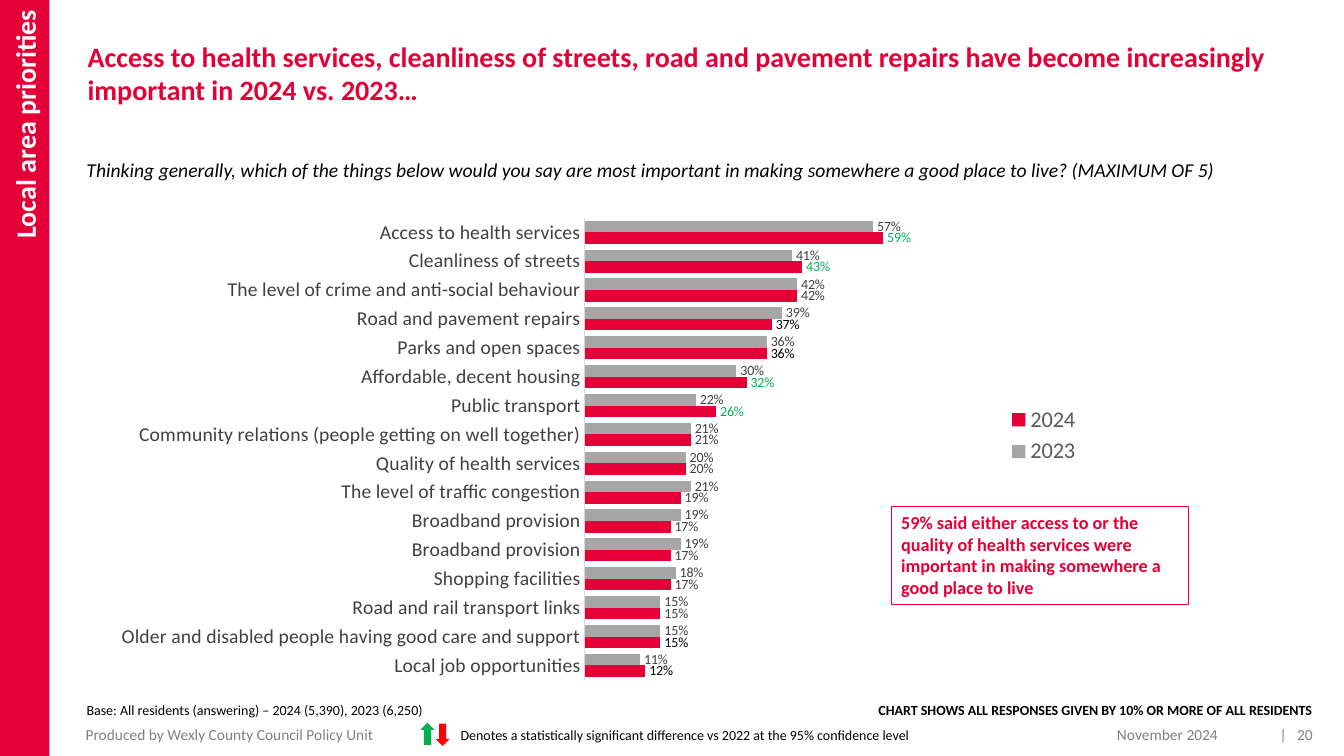
from dataclasses import dataclass

from lxml import etree
from pptx import Presentation
from pptx.chart.data import CategoryChartData
from pptx.dml.color import RGBColor
from pptx.enum.chart import XL_CHART_TYPE, XL_LABEL_POSITION, XL_LEGEND_POSITION, XL_TICK_MARK
from pptx.enum.shapes import MSO_SHAPE
from pptx.enum.text import MSO_ANCHOR, PP_ALIGN
from pptx.oxml.ns import qn
from pptx.util import Inches, Pt

LEFT, RIGHT = PP_ALIGN.LEFT, PP_ALIGN.RIGHT
TOP, MIDDLE = MSO_ANCHOR.TOP, MSO_ANCHOR.MIDDLE
RECTANGLE, UP, DOWN = MSO_SHAPE.RECTANGLE, MSO_SHAPE.UP_ARROW, MSO_SHAPE.DOWN_ARROW
BAR_CLUSTERED = XL_CHART_TYPE.BAR_CLUSTERED
OUTSIDE_END = XL_LABEL_POSITION.OUTSIDE_END
LEGEND_RIGHT = XL_LEGEND_POSITION.RIGHT
NO_TICK = XL_TICK_MARK.NONE


@dataclass(frozen=True)
class Theme:
    font: str = "Calibri"
    red: str = "E40037"
    white: str = "FFFFFF"
    black: str = "000000"
    dark: str = "404040"
    legend: str = "595959"
    footer: str = "808080"
    bar: str = "A6A6A6"
    axis: str = "D9D9D9"
    rise: str = "00B050"
    fall: str = "FF0000"
    heading: int = 20
    legend_size: int = 16
    body: int = 14
    callout: int = 13
    footer_size: int = 11
    small: int = 10


THEME = Theme()
INSETS = (0.1, 0.05, 0.1, 0.05)

SECTION = "Local area priorities"
CALLOUT = ("59% said either access to or the quality of health services were "
           "important in making somewhere a good place to live")

TEXTS = [
    dict(words="Access to health services, cleanliness of streets, road and pavement repairs "
               "have become increasingly important in 2024 vs. 2023…",
         place=(0.77, 0.34, 12.25, 1.18), size=THEME.heading, color=THEME.red, bold=True),
    dict(words="Thinking generally, which of the things below would you say are most important "
               "in making somewhere a good place to live? (MAXIMUM OF 5)",
         place=(0.76, 1.52, 12.07, 0.34), size=THEME.body, italic=True),
    dict(words="Base: All residents (answering) – 2024 (5,390), 2023 (6,250)",
         place=(0.76, 6.91, 3.75, 0.27)),
    dict(words="CHART SHOWS ALL RESPONSES GIVEN BY 10% OR MORE OF ALL RESIDENTS",
         place=(5.61, 6.91, 7.5, 0.27), bold=True, align=RIGHT),
    dict(words="Denotes a statistically significant difference vs 2022 at the 95% confidence level",
         place=(4.47, 7.16, 6.2, 0.27)),
    dict(words="Produced by Wexly County Council Policy Unit", place=(0.76, 7.21, 6.54, 0.15),
         size=THEME.footer_size, color=THEME.footer, anchor=MIDDLE, insets=(0.09, 0.05, 0.1, 0.05)),
    dict(words="November 2024", place=(9.68, 7.21, 2.4, 0.15), size=THEME.footer_size,
         color=THEME.footer, align=RIGHT, anchor=MIDDLE, insets=(0.1, 0.05, 0, 0.05)),
    dict(words="|   20", place=(12.17, 7.21, 0.85, 0.15), size=THEME.footer_size,
         color=THEME.footer, align=RIGHT, anchor=MIDDLE, insets=(0.1, 0.05, 0, 0.05)),
]

PRIORITIES = [
    ("Access to health services", 0.57, 0.59, THEME.rise),
    ("Cleanliness of streets", 0.41, 0.43, THEME.rise),
    ("The level of crime and anti-social behaviour", 0.42, 0.42, THEME.dark),
    ("Road and pavement repairs", 0.39, 0.37, THEME.black),
    ("Parks and open spaces", 0.36, 0.36, THEME.black),
    ("Affordable, decent housing", 0.30, 0.32, THEME.rise),
    ("Public transport", 0.22, 0.26, THEME.rise),
    ("Community relations (people getting on well together)", 0.21, 0.21, THEME.dark),
    ("Quality of health services", 0.20, 0.20, THEME.dark),
    ("The level of traffic congestion", 0.21, 0.19, THEME.dark),
    ("Broadband provision", 0.19, 0.17, THEME.dark),
    ("Broadband provision", 0.19, 0.17, THEME.dark),
    ("Shopping facilities", 0.18, 0.17, THEME.dark),
    ("Road and rail transport links", 0.15, 0.15, THEME.dark),
    ("Older and disabled people having good care and support", 0.15, 0.15, THEME.black),
    ("Local job opportunities", 0.11, 0.12, THEME.black),
]
CHART_PLACE = (1.05, 1.9, 9.77, 4.85)
PLOT_AREA = {"x": 0.486, "y": 0.054, "w": 0.514, "h": 0.946}
ARROWS = [(UP, (4.17, 7.17, 0.14, 0.22), THEME.rise),
          (DOWN, (4.32, 7.18, 0.14, 0.22), THEME.fall)]


def rgb(color):
    return RGBColor.from_string(color)


def inches(values):
    return [Inches(value) for value in values]


def style_font(font, size, color, bold=False, italic=False):
    font.name, font.size, font.bold, font.italic = THEME.font, Pt(size), bold, italic
    font.color.rgb = rgb(color)


def write(box, words, size=THEME.small, color=THEME.black, bold=False, italic=False,
          align=LEFT, anchor=TOP, insets=INSETS):
    frame = box.text_frame
    frame.word_wrap = True
    frame.vertical_anchor = anchor
    frame.margin_left, frame.margin_top, frame.margin_right, frame.margin_bottom = inches(insets)
    para = frame.paragraphs[0]
    para.alignment = align
    span = para.add_run()
    span.text = words
    style_font(span.font, size, color, bold, italic)


def add_block(page, kind, place, fill=None, line=None):
    block = page.shapes.add_shape(kind, *inches(place))
    block.shadow.inherit = False
    if fill:
        block.fill.solid()
        block.fill.fore_color.rgb = rgb(fill)
    else:
        block.fill.background()
    if line:
        block.line.color.rgb = rgb(line)
        block.line.width = Pt(0.75)
    else:
        block.line.fill.background()
    return block


def fix_plot_area(chart):
    plot_area = chart.element.find(".//" + qn("c:plotArea"))
    for old in plot_area.findall(qn("c:layout")):
        plot_area.remove(old)
    layout = etree.Element(qn("c:layout"))
    manual = etree.SubElement(layout, qn("c:manualLayout"))
    settings = {"layoutTarget": "inner", "xMode": "edge", "yMode": "edge", **PLOT_AREA}
    for name, value in settings.items():
        etree.SubElement(manual, qn("c:" + name)).set("val", str(value))
    plot_area.insert(0, layout)


def add_priorities_chart(page):
    names, before, after, label_colors = zip(*PRIORITIES)
    data = CategoryChartData(number_format="0%")
    data.categories = names
    data.add_series("2023", before)
    data.add_series("2024", after)
    chart = page.shapes.add_chart(BAR_CLUSTERED, *inches(CHART_PLACE), data).chart
    chart.has_title = False
    style_font(chart.font, THEME.small, THEME.black)
    fix_plot_area(chart)

    chart.has_legend = True
    chart.legend.position = LEGEND_RIGHT
    chart.legend.include_in_layout = False
    style_font(chart.legend.font, THEME.legend_size, THEME.legend)

    rows, scale = chart.category_axis, chart.value_axis
    rows.reverse_order = True
    rows.major_tick_mark = rows.minor_tick_mark = NO_TICK
    rows.format.line.color.rgb = rgb(THEME.axis)
    rows.format.line.width = Pt(0.75)
    style_font(rows.tick_labels.font, THEME.body, THEME.dark)
    scale.minimum_scale, scale.maximum_scale = 0, 1
    scale.has_major_gridlines = False
    scale.visible = False

    plot = chart.plots[0]
    plot.gap_width, plot.overlap, plot.vary_by_categories = 50, 0, False
    for series, color in zip(plot.series, (THEME.bar, THEME.red)):
        series.format.fill.solid()
        series.format.fill.fore_color.rgb = rgb(color)
        labels = series.data_labels
        labels.show_value = True
        labels.number_format, labels.number_format_is_linked = "0%", False
        labels.position = OUTSIDE_END
        style_font(labels.font, THEME.small, THEME.dark)
    for index, color in enumerate(label_colors):
        if color != THEME.dark:
            label = plot.series[1].points[index].data_label
            style_font(label.font, THEME.small, color)
            label.position = OUTSIDE_END


def main():
    deck = Presentation()
    deck.slide_width, deck.slide_height = Inches(13.33), Inches(7.5)
    page = deck.slides.add_slide(deck.slide_layouts[6])
    add_priorities_chart(page)

    band = add_block(page, RECTANGLE, (0, 0, 0.49, 7.5), fill=THEME.red)
    write(band, SECTION, THEME.heading, THEME.white, bold=True, align=RIGHT, anchor=MIDDLE,
          insets=(0.1, 0.1, 0.1, 0.05))
    band.element.find(".//" + qn("a:bodyPr")).set("vert", "vert270")

    for text in TEXTS:
        options = dict(text)
        write(page.shapes.add_textbox(*inches(options.pop("place"))), **options)

    callout = add_block(page, RECTANGLE, (8.84, 5.02, 2.95, 0.98), line=THEME.red)
    write(callout, CALLOUT, THEME.callout, THEME.red, bold=True)
    for kind, place, color in ARROWS:
        add_block(page, kind, place, fill=color)
    deck.save("out.pptx")


if __name__ == "__main__":
    main()
